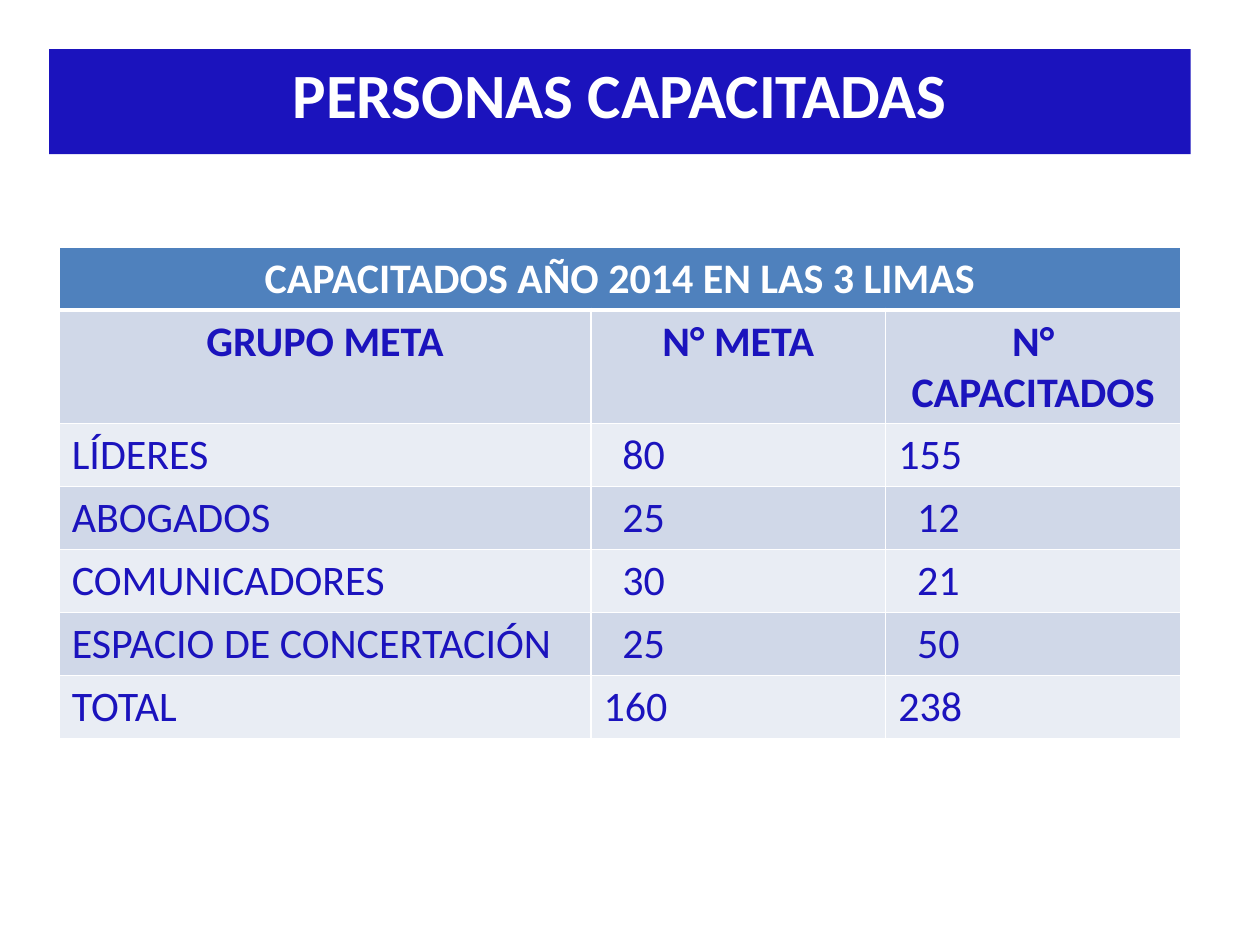
from lxml import etree
from pptx import Presentation
from pptx.dml.color import RGBColor
from pptx.enum import text
from pptx.oxml import ns
from pptx.util import Inches, Pt

# Content
TITLE = "PERSONAS CAPACITADAS"
TABLE_TITLE = "CAPACITADOS AÑO 2014 EN LAS 3 LIMAS"
HEADINGS = ("GRUPO META", "N° META", "N° CAPACITADOS")
GROUPS = [
    ("LÍDERES", "80", "155"),
    ("ABOGADOS", "25", "12"),
    ("COMUNICADORES", "30", "21"),
    ("ESPACIO DE CONCERTACIÓN", "25", "50"),
    ("TOTAL", "160", "238"),
]

# Format
FONT = "Calibri"
WHITE = RGBColor(0xFF, 0xFF, 0xFF)
NAVY = RGBColor(0x1B, 0x13, 0xBD)
BLUE = RGBColor(0x4F, 0x81, 0xBD)
BANDS = (RGBColor(0xD0, 0xD8, 0xE8), RGBColor(0xE9, 0xED, 0xF4))
COLUMN_WIDTHS = (4.22, 2.34, 2.34)
ROW_HEIGHT = 0.41
CELL_MARGIN = 0.1
DIGIT_INDENT = 0.15  # lines up two-digit numbers under three-digit ones


def write(frame, words, size=24, color=NAVY, bold=False, centered=False):
    para = frame.paragraphs[0]
    para.alignment = text.PP_ALIGN.CENTER if centered else text.PP_ALIGN.LEFT
    span = para.add_run()
    span.text = words
    span.font.name = FONT
    span.font.size = Pt(size)
    span.font.bold = bold
    span.font.color.rgb = color


def set_borders(cell, top=1, bottom=1):
    properties = cell._tc.get_or_add_tcPr()
    for side, points in (("L", 1), ("R", 1), ("T", top), ("B", bottom)):
        line = etree.SubElement(properties, ns.qn("a:ln" + side), w=str(Pt(points)))
        fill = etree.SubElement(line, ns.qn("a:solidFill"))
        etree.SubElement(fill, ns.qn("a:srgbClr"), val=str(WHITE))


def set_fill(target, color):
    target.fill.solid()
    target.fill.fore_color.rgb = color


deck = Presentation()
deck.slide_width, deck.slide_height = Inches(10), Inches(7.5)
page = deck.slides.add_slide(deck.slide_layouts[5])

# Title bar
title = page.shapes.title
title.left, title.top = Inches(0.39), Inches(0.39)
title.width, title.height = Inches(9.06), Inches(0.71)
set_fill(title, NAVY)
title.text_frame.auto_size = text.MSO_AUTO_SIZE.SHAPE_TO_FIT_TEXT
title.text_frame.vertical_anchor = text.MSO_ANCHOR.TOP
write(title.text_frame, TITLE, size=36, color=WHITE, bold=True, centered=True)

# Table
rows = [(TABLE_TITLE, "", ""), HEADINGS, *GROUPS]
table = page.shapes.add_table(
    len(rows), len(COLUMN_WIDTHS), Inches(0.47), Inches(1.96),
    Inches(sum(COLUMN_WIDTHS)), Inches(ROW_HEIGHT * len(rows))).table
for column, width in zip(table.columns, COLUMN_WIDTHS):
    column.width = Inches(width)
table.cell(0, 0).merge(table.cell(0, len(COLUMN_WIDTHS) - 1))

for r, values in enumerate(rows):
    table.rows[r].height = Inches(ROW_HEIGHT)
    for c, value in enumerate(values):
        cell = table.cell(r, c)
        set_borders(cell, top=3 if r == 1 else 1, bottom=3 if r == 0 else 1)
        set_fill(cell, BLUE if r == 0 else BANDS[(r - 1) % 2])
        indent = DIGIT_INDENT if value.isdigit() and len(value) == 2 else 0
        cell.margin_left = Inches(CELL_MARGIN + indent)
        if value:
            write(cell.text_frame, value, color=WHITE if r == 0 else NAVY,
                  bold=r < 2, centered=r < 2)

deck.save("out.pptx")
